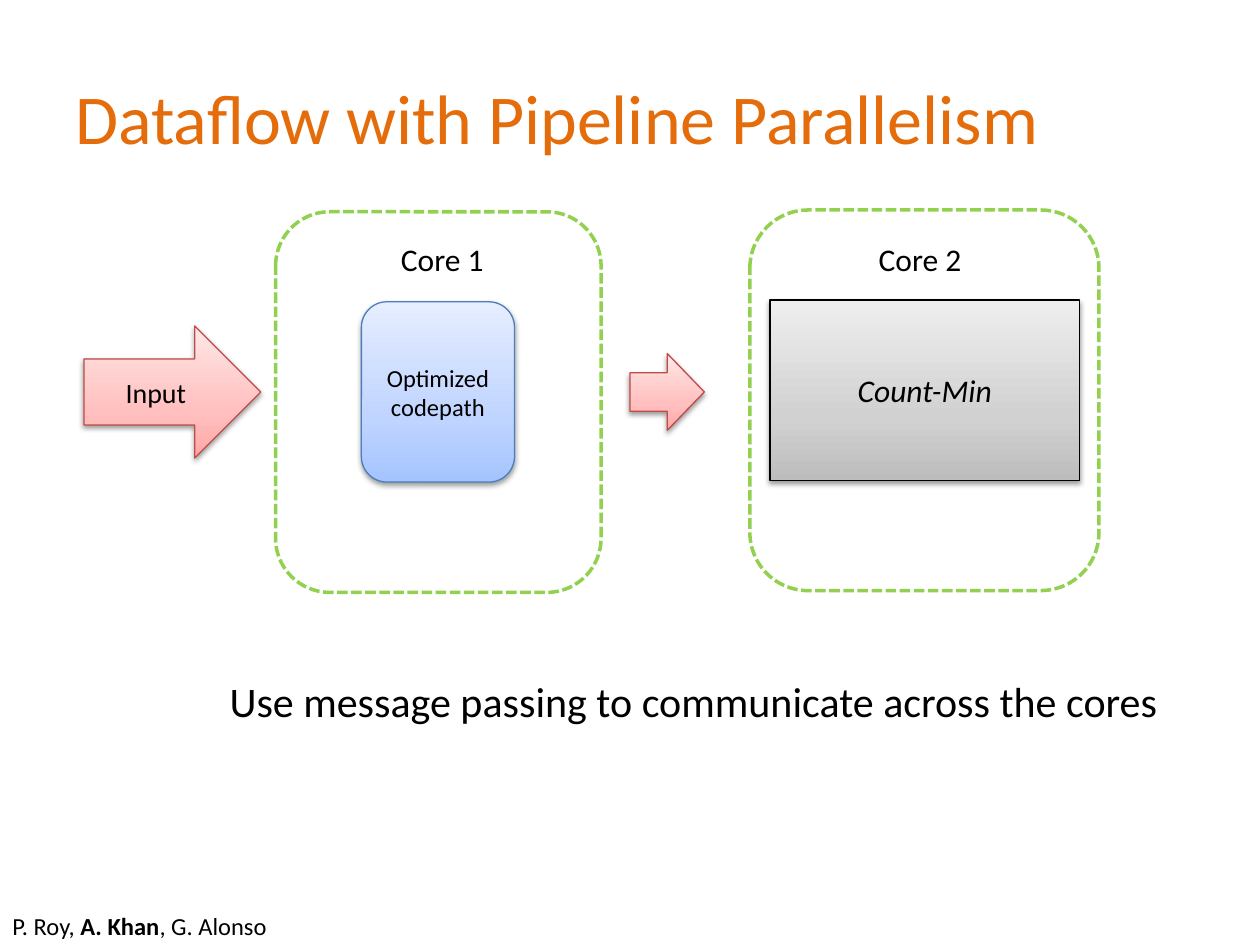
import copy
import dataclasses
import typing

import lxml.etree
import pptx
import pptx.dml.color
import pptx.enum.dml
import pptx.enum.shapes
import pptx.enum.text
import pptx.oxml
import pptx.oxml.ns
import pptx.util

Pt = pptx.util.Pt
Kind = pptx.enum.shapes.MSO_SHAPE
Align = pptx.enum.text.PP_ALIGN
Anchor = pptx.enum.text.MSO_ANCHOR
Fit = pptx.enum.text.MSO_AUTO_SIZE
Box = tuple[float, float, float, float]  # left, top, width, height in points


@dataclasses.dataclass(frozen=True)
class Theme:
    font: str = "Calibri"
    ink: str = "000000"
    title: str = "E46C0A"
    core: str = "92D050"
    grey: tuple = ("BDBDBD", "D1D1D1", "EEEEEE")
    blue: tuple = ("A4C4FF", "BFD4FF", "E6EEFF")
    red: tuple = ("FFA6A5", "FFC0BF", "FFE7E7")
    blue_edge: str = "4B7EBC"
    red_edge: str = "BF4C48"
    head: int = 40
    claim: int = 24
    label: int = 18
    input: int = 16
    small: int = 14


THEME = Theme()


@dataclasses.dataclass(frozen=True)
class Block:
    kind: Kind
    box: Box
    shades: tuple
    edge: str
    lines: tuple = ()
    size: int = THEME.label
    slant: bool = False


@dataclasses.dataclass(frozen=True)
class Note:
    box: Box
    runs: tuple  # (text, bold) pairs
    size: int
    align: Align = Align.LEFT
    wrap: bool = False
    fit: Fit = Fit.SHAPE_TO_FIT_TEXT


BLOCKS = (
    Block(Kind.RECTANGLE, (440, 171.5, 177, 103), THEME.grey, THEME.ink,
          ("Count-Min",), slant=True),
    Block(Kind.ROUNDED_RECTANGLE, (206.5, 172.5, 87.5, 103), THEME.blue,
          THEME.blue_edge, ("Optimized", "codepath"), THEME.small),
    Block(Kind.RIGHT_ARROW, (48, 186.25, 101, 75.5), THEME.red,
          THEME.red_edge, ("Input",), THEME.input),
    Block(Kind.RIGHT_ARROW, (360, 202, 42.5, 44), THEME.red, THEME.red_edge),
)
CORES = ((428.5, 120, 199.5, 217.5), (157.5, 121, 186, 217.5))
NOTES = (
    Note((121.5, 382.25, 549.5, 36), (("Use message passing to communicate across the cores", False),),
         THEME.claim, Align.CENTER),
    Note((222, 133.5, 62.5, 29), (("Core 1", False),), THEME.label),
    Note((495, 133.5, 62.5, 29), (("Core 2", False),), THEME.label),
    Note((0, 517, 354, 29), (("P. Roy, ", False), ("A. Khan", True), (", G. Alonso", False)),
         THEME.small, wrap=True, fit=Fit.NONE),
)


def paint(code: str) -> pptx.dml.color.RGBColor:
    return pptx.dml.color.RGBColor.from_string(code)


def apply(part: typing.Any, form: dict) -> None:
    for name, value in form.items():
        setattr(part, name, value)


def write(para, text: str, size: int, code: str = THEME.ink, **form) -> None:
    run = para.add_run()
    run.text = text
    apply(run.font, {"name": THEME.font, "size": Pt(size), **form})
    run.font.color.rgb = paint(code)


def shade(shape, codes: tuple) -> None:
    """Three-stop gradient, dark at the bottom."""
    shape.fill.gradient()
    shape.fill.gradient_angle = 90
    stops = shape._element.spPr.find(".//" + pptx.oxml.ns.qn("a:gsLst"))
    stops.append(copy.deepcopy(stops[-1]))
    for stop, place, code in zip(shape.fill.gradient_stops, (0, 0.35, 1), codes):
        stop.position = place
        stop.color.rgb = paint(code)


def cast(shape) -> None:
    """Soft shadow straight below the shape."""
    shape.shadow.inherit = False
    effects = shape._element.spPr.find(pptx.oxml.ns.qn("a:effectLst"))
    effects.append(pptx.oxml.parse_xml(
        f'<a:outerShdw {pptx.oxml.ns.nsdecls("a")} blurRad="{Pt(3.1)}" dist="{Pt(1.6)}"'
        ' dir="5400000" rotWithShape="0"><a:srgbClr val="000000">'
        '<a:alpha val="38000"/></a:srgbClr></a:outerShdw>'))


def edge(shape, code: str, width: float) -> None:
    shape.line.color.rgb = paint(code)
    shape.line.width = Pt(width)


def draw_block(slide, block: Block) -> None:
    shape = slide.shapes.add_shape(block.kind, *map(Pt, block.box))
    shade(shape, block.shades)
    edge(shape, block.edge, 0.75)
    cast(shape)
    frame = shape.text_frame
    frame.vertical_anchor = Anchor.MIDDLE
    for spot, line in enumerate(block.lines):
        para = frame.add_paragraph() if spot else frame.paragraphs[0]
        para.alignment = Align.CENTER
        write(para, line, block.size, italic=block.slant)


def draw_core(slide, box: Box) -> None:
    shape = slide.shapes.add_shape(Kind.ROUNDED_RECTANGLE, *map(Pt, box))
    shape.shadow.inherit = False
    shape.fill.background()
    edge(shape, THEME.core, 2)
    shape.line.dash_style = pptx.enum.dml.MSO_LINE.SQUARE_DOT


def draw_note(slide, note: Note) -> None:
    frame = slide.shapes.add_textbox(*map(Pt, note.box)).text_frame
    apply(frame, {"word_wrap": note.wrap, "auto_size": note.fit})
    para = frame.paragraphs[0]
    para.alignment = note.align
    for text, bold in note.runs:
        write(para, text, note.size, bold=bold)


def draw_title(slide, text: str) -> None:
    title = slide.shapes.title
    apply(title, dict(zip(("left", "top", "width", "height"), map(Pt, (36, 21.6, 648, 90)))))
    apply(title.text_frame, {"vertical_anchor": Anchor.MIDDLE, "auto_size": Fit.NONE})
    para = title.text_frame.paragraphs[0]
    para.alignment = Align.LEFT
    write(para, text, THEME.head, THEME.title)


def main() -> None:
    deck = pptx.Presentation()
    apply(deck, {"slide_width": Pt(720), "slide_height": Pt(540)})
    slide = deck.slides.add_slide(deck.slide_layouts[5])

    # Pipeline stages, the cores around them, then the words
    for block in BLOCKS:
        draw_block(slide, block)
    for box in CORES:
        draw_core(slide, box)
    for note in NOTES:
        draw_note(slide, note)
    draw_title(slide, "Dataflow with Pipeline Parallelism")

    deck.save("out.pptx")


if __name__ == "__main__":
    main()
